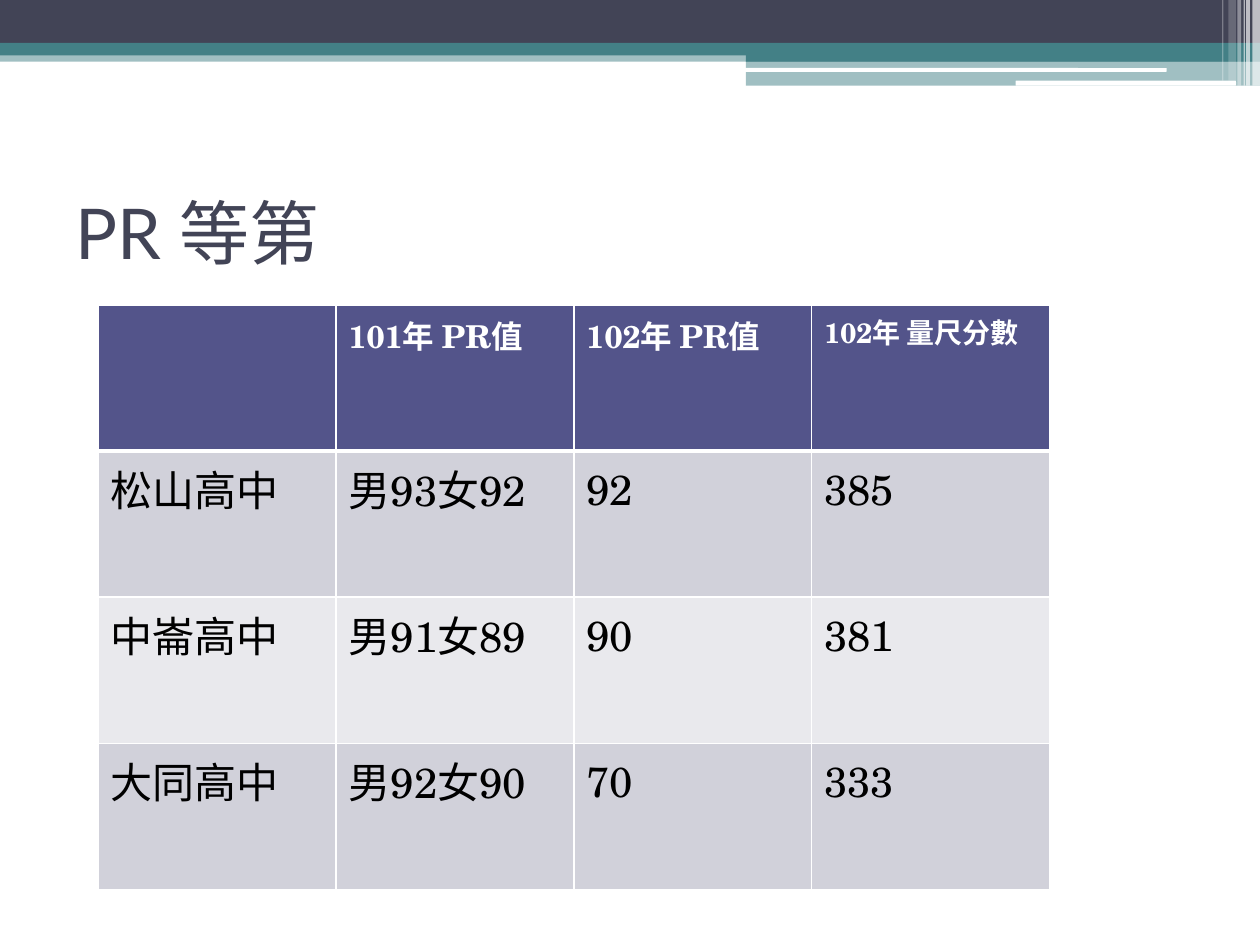
from lxml import etree
from pptx import Presentation, util as u
from pptx.dml.color import RGBColor
from pptx.enum import shapes, text
from pptx.oxml.ns import qn

NAVY = RGBColor(0x42, 0x44, 0x56)
TEAL = RGBColor(0x43, 0x80, 0x86)
WHITE = RGBColor(0xFF, 0xFF, 0xFF)
BLACK = RGBColor(0, 0, 0)
INDIGO = RGBColor(0x53, 0x54, 0x8A)
BANDS = [RGBColor(0xD1, 0xD1, 0xDA), RGBColor(0xE9, 0xE9, 0xED)]

TITLE = "PR 等第"
ROWS = [
    ["", "101年 PR值", "102年 PR值", "102年 量尺分數"],
    ["松山高中", "男93女92", "92", "385"],
    ["中崙高中", "男91女89", "90", "381"],
    ["大同高中", "男92女90", "70", "333"],
]
HEADER_SIZES = [18, 18, 18, 16]

W, H = 10, 7.5
SPLIT = 5.92
BANNER = [
    (0, 0.4, W, 0.09, TEAL, 50),
    (0, 0, W, 0.34, NAVY, 100),
    (0, 0.34, W, 0.1, TEAL, 100),
    (SPLIT, 0.39, W - SPLIT, 0.1, TEAL, 100),
    (SPLIT, 0.48, W - SPLIT, 0.2, TEAL, 50),
]
ROUNDED = [(5.91, 0.54, 3.35, 0.03), (8.06, 0.64, 1.75, 0.04)]
STRIPES = [
    (9.94, 0.06, 0.68, 65),
    (9.89, 0.03, 0.68, 65),
    (9.87, 0.01, 0.68, 60),
    (9.82, 0.03, 0.68, 40),
    (9.75, 0.06, 0.64, 20),
    (9.7, 0.01, 0.64, 30),
]
TABLE = (0.78, 2.42, 7.55, 4.64)


def inches(*values):
    return [u.Inches(v) for v in values]


def add_block(s, box, color, opacity=100, kind=shapes.MSO_SHAPE.RECTANGLE):
    sp = s.shapes.add_shape(kind, *inches(*box))
    sp.shadow.inherit = False
    sp.line.fill.background()
    sp.fill.solid()
    sp.fill.fore_color.rgb = color
    if opacity < 100:
        clr = sp.fill._xPr.find(".//" + qn("a:srgbClr"))
        etree.SubElement(clr, qn("a:alpha"), val=str(opacity * 1000))
    return sp


def add_run(p, words, size, name, color, bold=False):
    r = p.add_run()
    r.text = words
    for key, value in dict(size=u.Pt(size), name=name, bold=bold).items():
        setattr(r.font, key, value)
    r.font.color.rgb = color


def add_borders(cell, widths):
    tcPr = cell._tc.get_or_add_tcPr()
    for i, (side, width) in enumerate(widths.items()):
        ln = etree.Element(qn("a:ln" + side), w=str(u.Pt(width)))
        fill = etree.SubElement(ln, qn("a:solidFill"))
        etree.SubElement(fill, qn("a:srgbClr"), val=str(WHITE))
        tcPr.insert(i, ln)


def add_scores(s):
    table = s.shapes.add_table(len(ROWS), len(ROWS[0]), *inches(*TABLE)).table
    for column in table.columns:
        column.width = u.Inches(TABLE[2] / len(ROWS[0]))
    for i, row in enumerate(ROWS):
        table.rows[i].height = u.Inches(TABLE[3] / len(ROWS))
        for j, words in enumerate(row):
            cell = table.cell(i, j)
            head = i == 0
            cell.fill.solid()
            cell.fill.fore_color.rgb = INDIGO if head else BANDS[(i - 1) % 2]
            add_borders(cell, dict(L=1, R=1, T=3 if i == 1 else 1, B=3 if head else 1))
            if words:
                add_run(cell.text_frame.paragraphs[0], words,
                        HEADER_SIZES[j] if head else 24, "TeX Gyre Schola",
                        WHITE if head else BLACK, head)


def main():
    prs = Presentation()
    prs.slide_width, prs.slide_height = inches(W, H)
    s = prs.slides.add_slide(prs.slide_layouts[6])

    for *box, color, opacity in BANNER:
        add_block(s, box, color, opacity)
    for box in ROUNDED:
        sp = add_block(s, box, WHITE, kind=shapes.MSO_SHAPE.ROUNDED_RECTANGLE)
        sp.adjustments[0] = 0.17
    for x, width, height, opacity in STRIPES:
        add_block(s, (x, 0, width, height), WHITE, opacity)

    tf = s.shapes.add_textbox(*inches(0.5, 1.25, 9, 1.17)).text_frame
    tf.word_wrap = True
    tf.vertical_anchor = text.MSO_ANCHOR.MIDDLE
    add_run(tf.paragraphs[0], TITLE, 40, "Lato", NAVY)

    add_scores(s)
    prs.save("out.pptx")


if __name__ == "__main__":
    main()
